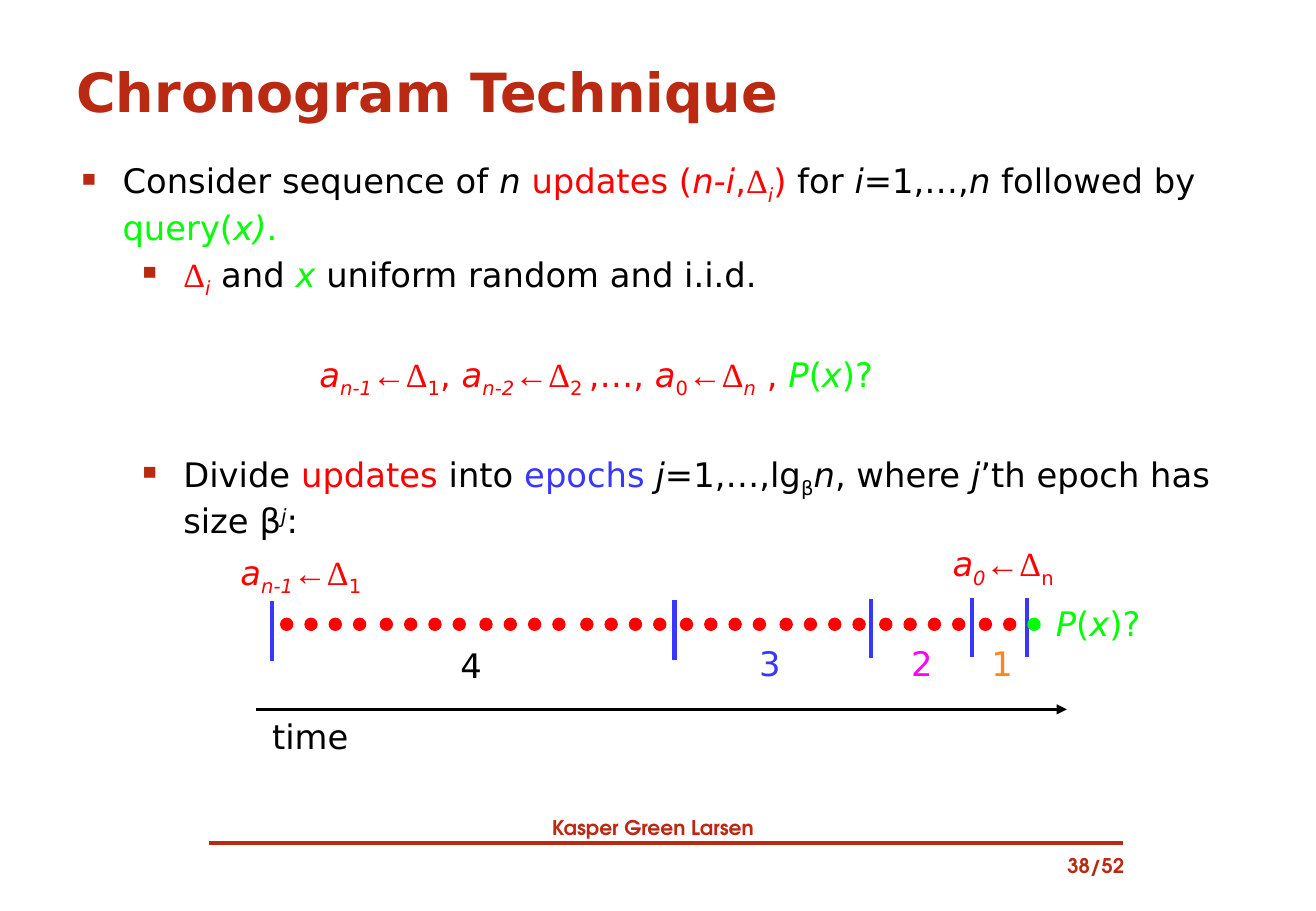
from pptx import Presentation
from pptx.dml.color import RGBColor
from pptx.enum.shapes import MSO_CONNECTOR as CONN, MSO_SHAPE as SHAPE
from pptx.enum.text import MSO_ANCHOR as ANCHOR, PP_ALIGN as ALIGN
from pptx.oxml.ns import qn
from pptx.util import Pt
from lxml.etree import SubElement

PX = 9144  # 100 px to the inch
BRICK = RGBColor(0xBA, 0x2A, 0x12)
BLACK = RGBColor(0, 0, 0)
RED = RGBColor(0xFF, 0, 0)
GREEN = RGBColor(0, 0xFF, 0)
BLUE = RGBColor(0x37, 0x37, 0xFF)
MAGENTA = RGBColor(0xFF, 0, 0xFF)
ORANGE = RGBColor(0xFF, 0x85, 0x21)
SANS, SERIF, FOOTER = "DejaVu Sans", "Times New Roman", "TeX Gyre Adventor"

# Run styles: i italic, s serif, b bold, f footer font, - subscript, + superscript
BASELINES = {"-": "-25000", "+": "30000"}

prs = Presentation()
prs.slide_width, prs.slide_height = 1083 * PX, 750 * PX
slide = prs.slides.add_slide(prs.slide_layouts[6])
shapes = slide.shapes


def add_text(box, paragraphs, size=20, align=ALIGN.LEFT, anchor=ANCHOR.TOP):
    """Add a text box; each paragraph is a list of (text, colour, style) runs."""
    tf = shapes.add_textbox(*(v * PX for v in box)).text_frame
    tf.word_wrap = True
    tf.vertical_anchor = anchor
    for n, runs in enumerate(paragraphs):
        p = tf.paragraphs[0] if n == 0 else tf.add_paragraph()
        p.alignment = align
        for text, colour, style in runs:
            r = p.add_run()
            r.text = text
            name = SERIF if "s" in style else FOOTER if "f" in style else SANS
            font = {"size": Pt(size), "name": name, "bold": "b" in style, "italic": "i" in style}
            for key, value in font.items():
                setattr(r.font, key, value)
            r.font.color.rgb = colour
            for mark, offset in BASELINES.items():
                if mark in style:
                    r._r.get_or_add_rPr().set("baseline", offset)
    return tf


def add_line(x1, y1, x2, y2, colour, width):
    line = shapes.add_connector(CONN.STRAIGHT, x1 * PX, y1 * PX, x2 * PX, y2 * PX)
    line.line.color.rgb = colour
    line.line.width = Pt(width)
    SubElement(line._element.spPr, qn("a:effectLst"))
    return line


# Footer
add_text((53, 666, 969, 30), [[("Kasper Green Larsen", BRICK, "bf")]], 12, ALIGN.CENTER)
add_text((837, 698, 98, 30), [[("38/52", BRICK, "bf")]], 12, ALIGN.RIGHT)
add_line(172, 694, 924, 694, BRICK, 2.25)

# Title and body
add_text((53, 36, 975, 77), [[("Chronogram Technique", BRICK, "b")]], 32, anchor=ANCHOR.MIDDLE)

query = [("P", GREEN, "i"), ("(", GREEN, ""), ("x", GREEN, "i"), (")?", GREEN, "")]
first_update = [("a", RED, "i"), ("n-1", RED, "i-"), ("←Δ", RED, "s"), ("1", RED, "-")]

body = add_text((53, 127, 968, 520), [
    [("Consider sequence of ", BLACK, ""), ("n ", BLACK, "i"), ("updates (", RED, ""),
     ("n-i", RED, "i"), (",", RED, ""), ("Δ", RED, "s"), ("i", RED, "i-"), (")", RED, ""),
     (" for ", BLACK, ""), ("i", BLACK, "i"), ("=1,…,", BLACK, ""), ("n", BLACK, "i"),
     (" followed by ", BLACK, ""), ("query(", GREEN, ""), ("x)", GREEN, "i"), (".", GREEN, "")],
    [("Δ", RED, "s"), ("i", RED, "i-"), (" and ", BLACK, ""), ("x", GREEN, "i"),
     (" uniform random and i.i.d.", BLACK, "")],
    first_update + [
        (",", RED, ""), (" a", RED, "i"), ("n-2", RED, "i-"), ("←Δ", RED, "s"), ("2 ", RED, "-"),
        (",…, ", RED, ""), ("a", RED, "i"), ("0", RED, "-"), ("←Δ", RED, "s"), ("n", RED, "i-"),
        (" , ", RED, "")] + query,
    [("Divide ", BLACK, ""), ("updates", RED, ""), (" into ", BLACK, ""), ("epochs ", BLUE, ""),
     ("j", BLACK, "i"), ("=1,…,lg", BLACK, ""), ("β", BLACK, "-"), ("n", BLACK, "i"),
     (", where ", BLACK, ""), ("j", BLACK, "i"), ("’th epoch has size β", BLACK, ""),
     ("j", BLACK, "i+"), (":", BLACK, "")],
])
# Left margin, space before, bulleted
layout = [(38, 0, True), (88, 4, True), (200, 32, False), (88, 32, True)]
for p, (margin, before, bulleted) in zip(body.paragraphs, layout):
    pPr = p._p.get_or_add_pPr()
    pPr.set("marL", str(margin * PX))
    pPr.set("indent", str(-38 * PX if bulleted else 0))
    if bulleted:
        SubElement(SubElement(pPr, qn("a:buClr")), qn("a:srgbClr")).set("val", str(BRICK))
        SubElement(pPr, qn("a:buChar")).set("char", "▪")
    p.space_before = Pt(before)

# Epoch borders and numbers
for x, y in [(224, 495), (555, 494), (717, 493), (800, 492), (845, 492)]:
    add_line(x, y, x, y + 49, BLUE, 2.5)
for number, x, y, colour in [("4", 369, 526, BLACK), ("3", 615, 524, BLUE),
                             ("2", 740, 524, MAGENTA), ("1", 806, 524, ORANGE)]:
    add_text((x, y, 44, 44), [[(number, colour, "")]])

# Updates in sets of four, then the query
UPDATES = 30
for n in range(UPDATES + 1):
    group, place = divmod(n, 4)
    x = 231 + round(82.2 * group) + 20 * place
    dot = shapes.add_shape(SHAPE.OVAL, x * PX, 509 * PX, 10 * PX, 10 * PX)
    dot.shadow.inherit = False
    colour = RED if n < UPDATES else GREEN
    dot.fill.solid()
    dot.fill.fore_color.rgb = colour
    dot.line.color.rgb = colour
    dot.line.width = Pt(0.75)

# Time axis
axis = add_line(211, 584, 878, 584, BLACK, 2)
SubElement(axis.line._get_or_add_ln(), qn("a:tailEnd")).set("type", "triangle")
add_text((214, 584, 139, 44), [[("time", BLACK, "")]])

# Operations above and beside the dots
last_update = [("a", RED, "i"), ("0", RED, "i-"), ("←Δ", RED, "s"), ("n", RED, "-")]
for x, y, runs in [(188, 449, first_update), (774, 442, last_update), (859, 491, query)]:
    add_text((x, y, 145, 44), [runs])

prs.save("out.pptx")
